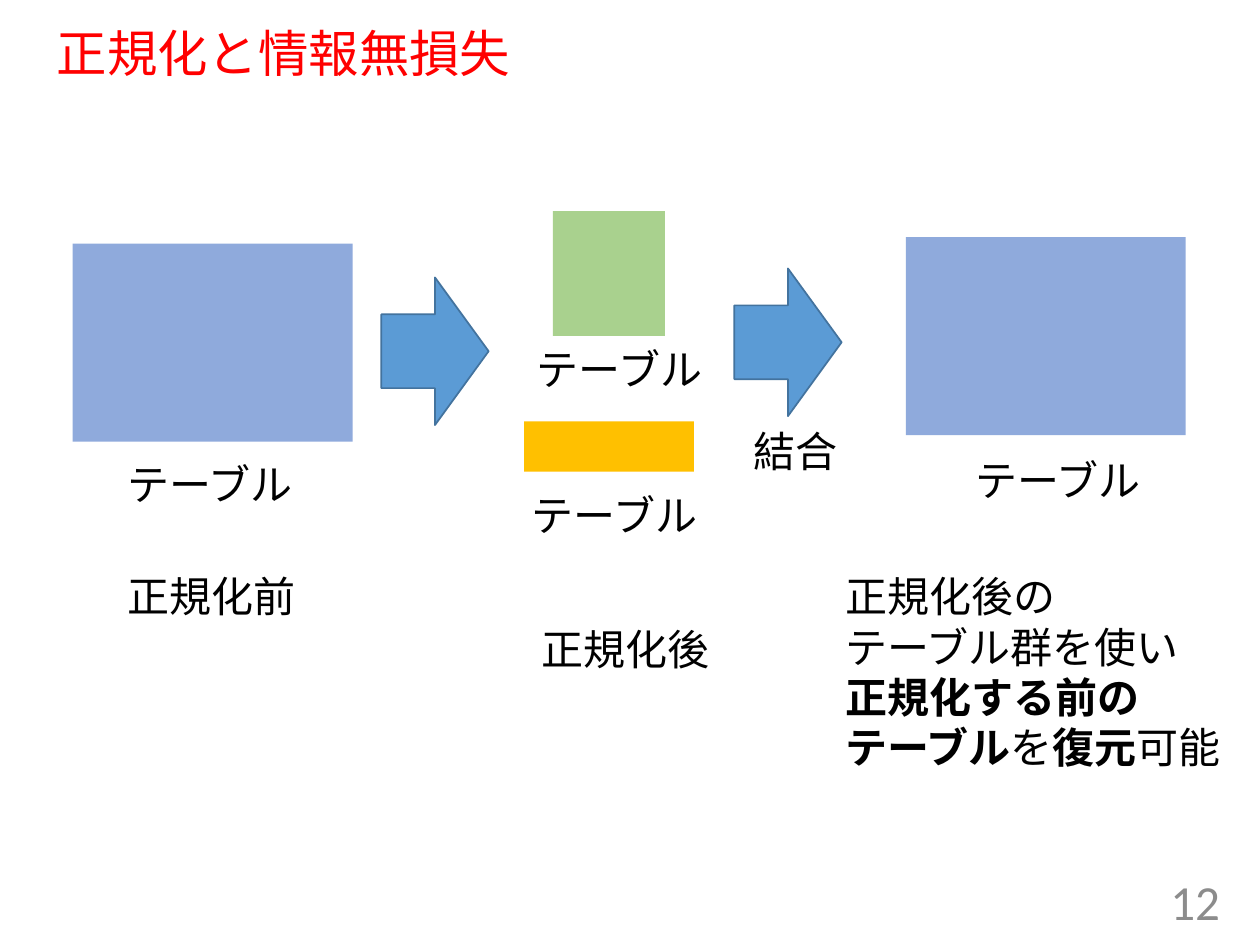
"""Builds a slide showing that normalising a table loses no information."""
import lxml.etree
import pptx
import pptx.dml.color
import pptx.enum.shapes
import pptx.enum.text
import pptx.oxml.ns
import pptx.util

LATIN = "Calibri"
JAPANESE = "Noto Sans CJK JP"
BLUE = "8FAADC"
GREEN = "A9D18E"
GOLD = "FFC000"


def color(value):
    return pptx.dml.color.RGBColor.from_string(value)


def points(*values):
    return [pptx.util.Pt(value) for value in values]


class SlideBuilder:
    def __init__(self, slide):
        self.slide = slide
        self.text_color = "000000"
        self.text_size = 24

    def format_span(self, span, font, size, fill, bold=None):
        span.font.name = font
        span.font.size = pptx.util.Pt(size)
        span.font.color.rgb = color(fill)
        span.font.bold = bold
        east_asian = lxml.etree.SubElement(
            span.font._element, pptx.oxml.ns.qn("a:ea"))
        east_asian.set("typeface", JAPANESE)

    def title(self, text, bounds, size, fill):
        box = self.slide.shapes.title
        box.left, box.top, box.width, box.height = points(*bounds)
        frame = box.text_frame
        frame.text = text
        frame.auto_size = pptx.enum.text.MSO_AUTO_SIZE.NONE
        frame.vertical_anchor = pptx.enum.text.MSO_ANCHOR.MIDDLE
        para = frame.paragraphs[0]
        para.alignment = pptx.enum.text.PP_ALIGN.LEFT
        para.line_spacing = 0.9
        self.format_span(para.runs[0], LATIN, size, fill)

    def label(self, lines, bounds, font=LATIN):
        box = self.slide.shapes.add_textbox(*points(*bounds))
        frame = box.text_frame
        frame.word_wrap = False
        frame.auto_size = pptx.enum.text.MSO_AUTO_SIZE.SHAPE_TO_FIT_TEXT
        for index, line in enumerate(lines):
            para = frame.add_paragraph() if index else frame.paragraphs[0]
            for text, bold in line:
                span = para.add_run()
                span.text = text
                self.format_span(span, font, self.text_size, self.text_color, bold)

    def page_number(self, text, bounds, size, fill):
        box = self.slide.shapes.add_textbox(*points(*bounds))
        frame = box.text_frame
        frame.text = text
        frame.word_wrap = True
        frame.vertical_anchor = pptx.enum.text.MSO_ANCHOR.MIDDLE
        para = frame.paragraphs[0]
        para.alignment = pptx.enum.text.PP_ALIGN.RIGHT
        self.format_span(para.runs[0], LATIN, size, fill)

    def shape(self, kind, bounds, fill):
        shape = self.slide.shapes.add_shape(kind, *points(*bounds))
        shape.shadow.inherit = False
        shape.fill.solid()
        shape.fill.fore_color.rgb = color(fill)
        return shape

    def table_block(self, bounds, fill):
        block = self.shape(pptx.enum.shapes.MSO_SHAPE.RECTANGLE, bounds, fill)
        block.line.fill.background()

    def arrow(self, left, top):
        arrow = self.shape(pptx.enum.shapes.MSO_SHAPE.RIGHT_ARROW,
                           (left, top, 61.3, 84.4), "5B9BD5")
        arrow.line.color.rgb = color("43739E")
        arrow.line.width = pptx.util.Pt(1)


def main():
    deck = pptx.Presentation()
    deck.slide_width, deck.slide_height = points(720, 540)
    page = SlideBuilder(deck.slides.add_slide(deck.slide_layouts[5]))

    page.title("正規化と情報無損失", (25.2, 13.7, 666, 36.7), 28.8, "FF0000")
    page.page_number("12", (542.2, 500.4, 162, 28.8), 28, "8C8C8C")

    for bounds, fill in (
        ((41.5, 139.2, 160, 113.2), BLUE),
        ((316, 120.7, 64, 71.3), GREEN),
        ((299.5, 240.8, 97, 28.8), GOLD),
        ((517.6, 135.5, 160, 113.2), BLUE),
    ):
        page.table_block(bounds, fill)

    for left, top in ((217.9, 158.5), (419.6, 153.4)):
        page.arrow(left, top)

    for left, top in ((65.5, 258.5), (299.5, 193), (296.8, 276), (550.1, 256.3)):
        page.label([[("テーブル", None)]], (left, top, 111.6, 36))
    page.label([[("結合", None)]], (423.4, 239.8, 63.4, 36))

    for text, left, top in (("正規化前", 65.5, 322.6), ("正規化後", 302.6, 352.8)):
        page.label([[(text, None)]], (left, top, 111.6, 36), JAPANESE)
    page.label([
        [("正規化後の", None)],
        [("テーブル群を使い", None)],
        [("正規化する前の", True)],
        [("テーブル", True), ("を", None), ("復元", True), ("可能", None)],
    ], (476, 322.6, 232.6, 123.8), JAPANESE)

    deck.save("out.pptx")


if __name__ == "__main__":
    main()
